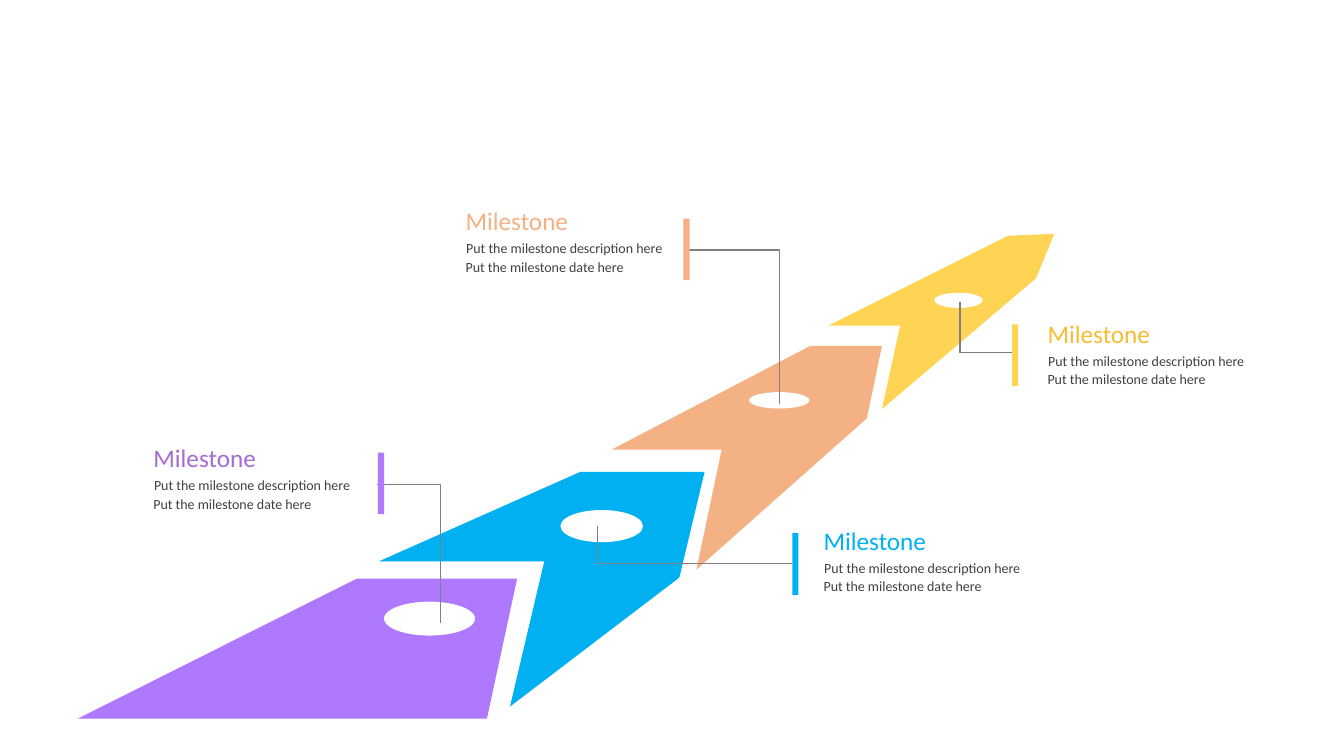
from dataclasses import dataclass

from lxml import etree
from pptx import Presentation
from pptx.dml.color import RGBColor
from pptx.enum.shapes import MSO_CONNECTOR, MSO_SHAPE
from pptx.enum.text import MSO_ANCHOR, PP_ALIGN
from pptx.oxml.ns import qn
from pptx.util import Pt

ELBOW = MSO_CONNECTOR.ELBOW
OVAL, RECTANGLE = MSO_SHAPE.OVAL, MSO_SHAPE.RECTANGLE
TOP, LEFT = MSO_ANCHOR.TOP, PP_ALIGN.LEFT


@dataclass(frozen=True)
class Theme:
    font: str = "Calibri"
    heading_size: float = 18
    body_size: float = 10
    purple: str = "AF79FF"
    purple_text: str = "A66BD3"
    blue: str = "00B0F0"
    peach: str = "F4B183"
    yellow: str = "FFD454"
    yellow_text: str = "F6BD33"
    white: str = "FFFFFF"
    text: str = "404040"
    leader: str = "808080"


theme = Theme()


def paint(shape, color):
    shape.shadow.inherit = False
    shape.fill.solid()
    shape.fill.fore_color.rgb = RGBColor.from_string(color)
    shape.line.fill.background()


def add_text(shapes, text, *, left, top, width, height, size, color):
    box = shapes.add_textbox(Pt(left), Pt(top), Pt(width), Pt(height))
    frame = box.text_frame
    frame.word_wrap = True
    frame.vertical_anchor = TOP
    frame.margin_left = frame.margin_right = 0
    frame.margin_top = frame.margin_bottom = 0
    paragraph = frame.paragraphs[0]
    paragraph.alignment = LEFT
    run = paragraph.add_run()
    run.text = text
    run.font.name = theme.font
    run.font.size = Pt(size)
    run.font.color.rgb = RGBColor.from_string(color)


presentation = Presentation()
presentation.slide_width, presentation.slide_height = Pt(960), Pt(540)
slide = presentation.slides.add_slide(presentation.slide_layouts[6])

# Milestones: arrow outline, oval (left, top, width, height), bar corner,
# leader from bar to oval, caption corner
milestones = [
    dict(color=theme.purple, heading=theme.purple_text,
         arrow=[(369.4, 413.3), (254.9, 413.3), (55.4, 513.4), (347.8, 513.4)],
         oval=(274.3, 429.8, 65, 24.2), bar=(270, 323.3),
         leader=(269.3, 346.3, 314.6, 445), caption=(109.6, 316.1)),
    dict(color=theme.peach, heading=theme.peach,
         arrow=[(515.5, 321.1), (437, 321.1), (578.9, 247), (630, 247),
                (619.2, 298.8), (497.5, 406.8)],
         oval=(535, 280.1, 43.2, 11.7), bar=(488.2, 156.2),
         leader=(492.5, 178.6, 556.6, 288.7), caption=(332.6, 146.9)),
    dict(color=theme.blue, heading=theme.blue,
         arrow=[(388.8, 401), (270.7, 401), (414.7, 337), (503.3, 337),
                (485.3, 412.6), (364.3, 504.7)],
         oval=(400.3, 364.3, 59, 23), bar=(565.9, 380.9),
         leader=(565.9, 402.5, 427, 375.8), caption=(588.3, 375.1)),
    dict(color=theme.yellow, heading=theme.yellow_text,
         arrow=[(643, 232.6), (591.8, 232.6), (720, 168.5), (753.1, 167),
                (740.2, 198.7), (630, 292.3)],
         oval=(667.4, 209.1, 34.6, 10.8), bar=(722.9, 231.8),
         leader=(722.9, 252, 685.8, 216), caption=(748.3, 227.5)),
]

# Road of arrows
road = slide.shapes.add_group_shape().shapes
for milestone in milestones:
    start, *corners = [(Pt(x), Pt(y)) for x, y in milestone["arrow"]]
    outline = road.build_freeform(*start)
    outline.add_line_segments(corners, close=True)
    paint(outline.convert_to_shape(), milestone["color"])

# Ovals, leaders and bars
for milestone in milestones:
    oval = road.add_shape(OVAL, *map(Pt, milestone["oval"]))
    paint(oval, theme.white)

    leader = road.add_connector(ELBOW, *map(Pt, milestone["leader"]))
    leader.line.color.rgb = RGBColor.from_string(theme.leader)
    leader.line.width = Pt(1)
    properties = leader._element.spPr
    properties.find(qn("a:prstGeom")).set("prst", "bentConnector2")
    etree.SubElement(properties, qn("a:effectLst"))

    bar = road.add_shape(RECTANGLE, *map(Pt, milestone["bar"]), Pt(4.4), Pt(44))
    paint(bar, milestone["color"])

# Captions
for milestone in milestones:
    left, top = milestone["caption"]
    caption = slide.shapes.add_group_shape().shapes
    add_text(caption, "Milestone", left=left, top=top, width=102.2, height=21.6,
             size=theme.heading_size, color=milestone["heading"])
    add_text(caption, "Put the milestone description here", left=left + 0.4,
             top=top + 24.5, width=159.8, height=12.2,
             size=theme.body_size, color=theme.text)
    add_text(caption, "Put the milestone date here", left=left,
             top=top + 37.5, width=115.2, height=21.6,
             size=theme.body_size, color=theme.text)

presentation.save("out.pptx")
